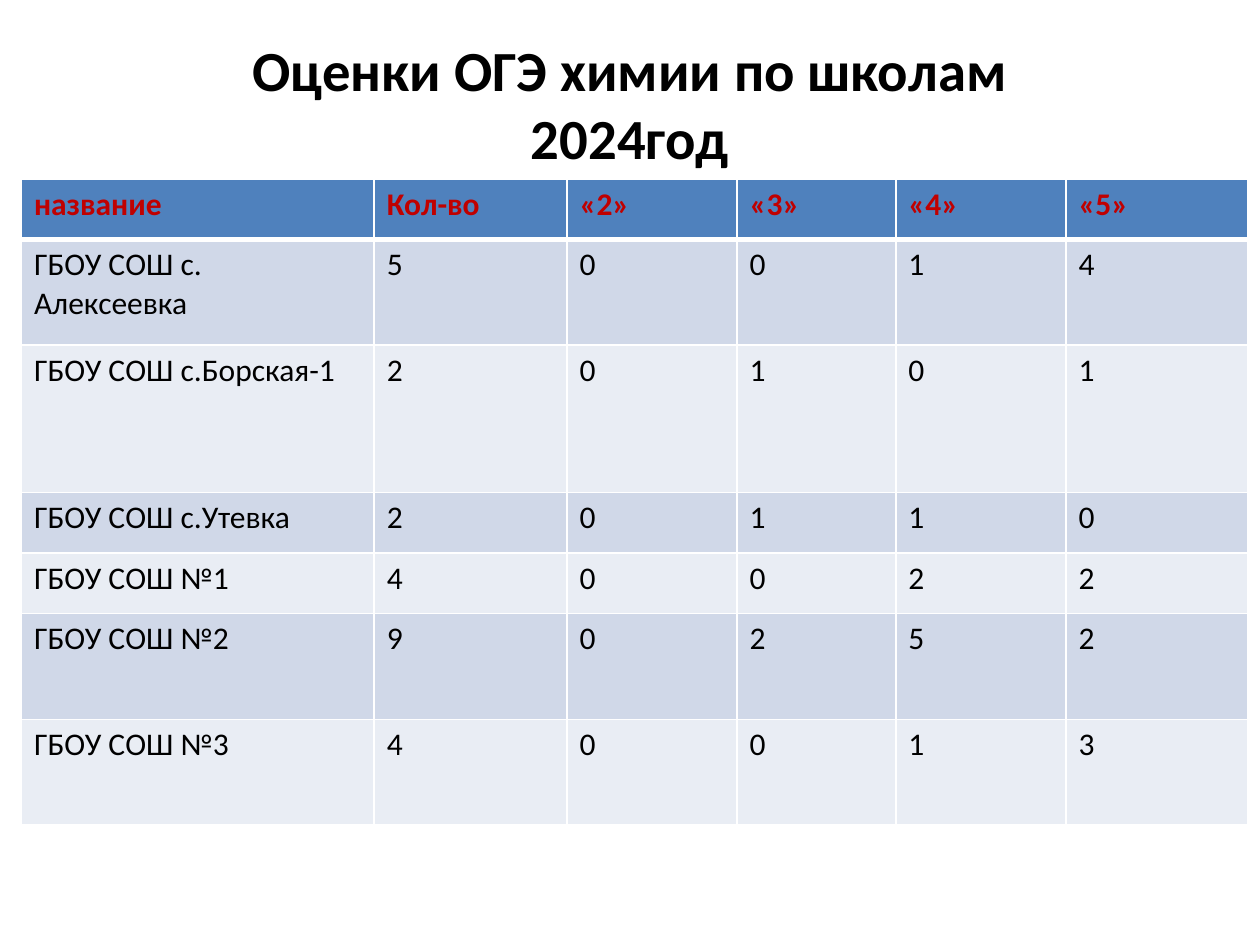
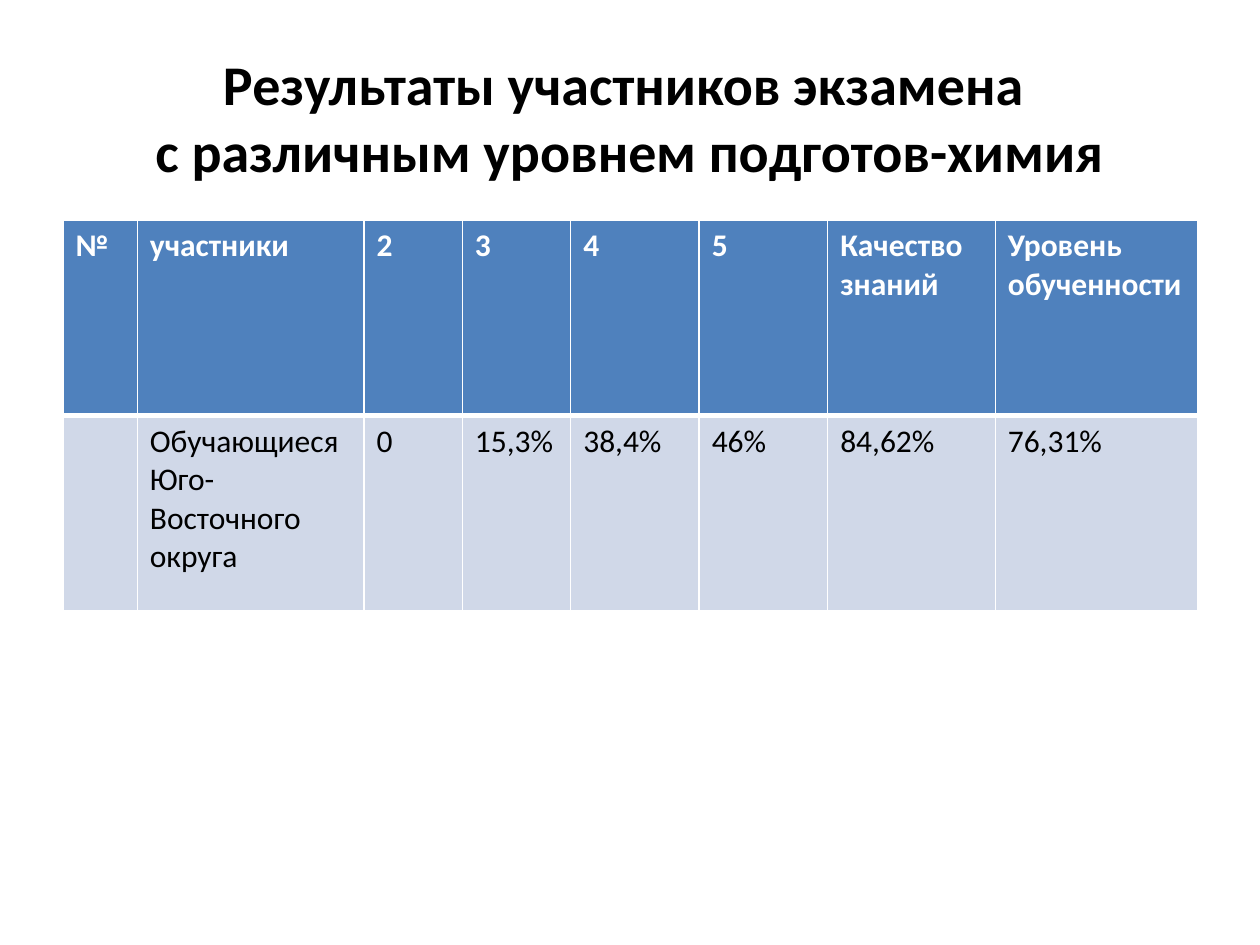
"""Build two slides of chemistry exam results, each a title above a table."""
from dataclasses import dataclass

from lxml import etree
from pptx import Presentation
from pptx import util as u
from pptx.dml.color import RGBColor
from pptx.enum import text
from pptx.oxml import ns


@dataclass(frozen=True)
class Theme:
    font: str = "Calibri"
    title_size: float = 32
    table_size: float = 18
    ink: str = "000000"
    white: str = "FFFFFF"
    red: str = "C00000"
    header_fill: str = "4F81BD"
    band_fills: tuple = ("D0D8E8", "E9EDF4")
    thin_line: float = 1
    thick_line: float = 3


theme = Theme()


def style_paragraph(paragraph, size, color, bold):
    paragraph.font.name = theme.font
    paragraph.font.size = u.Pt(size)
    paragraph.font.bold = bold
    paragraph.font.color.rgb = RGBColor.from_string(color)


def add_border(cell, side, width):
    properties = cell._tc.get_or_add_tcPr()
    line = etree.SubElement(properties, ns.qn(f"a:ln{side}"), w=str(u.Pt(width)))
    fill = etree.SubElement(line, ns.qn("a:solidFill"))
    etree.SubElement(fill, ns.qn("a:srgbClr"), val=theme.white)


slides = [
    {
        "title": "Оценки ОГЭ химии по школам\v2024год",
        "title_size": 32.4,
        "title_height": 1.03,
        "table_at": (0.17, 1.42),
        "header_color": theme.red,
        "widths": [2.8, 1.53, 1.35, 1.26, 1.35, 1.44],
        "heights": [0.48, 0.84, 1.17, 0.48, 0.48, 0.84, 0.84],
        "rows": [
            ["название", "Кол-во", "«2»", "«3»", "«4»", "«5»"],
            ["ГБОУ СОШ с. Алексеевка", 5, 0, 0, 1, 4],
            ["ГБОУ СОШ с.Борская-1", 2, 0, 1, 0, 1],
            ["ГБОУ СОШ с.Утевка", 2, 0, 1, 1, 0],
            ["ГБОУ СОШ №1", 4, 0, 0, 2, 2],
            ["ГБОУ СОШ №2", 9, 0, 2, 5, 2],
            ["ГБОУ СОШ №3", 4, 0, 0, 1, 3],
        ],
    },
    {
        "title": "Результаты участников экзамена \vс различным уровнем подготов-химия",
        "title_size": theme.title_size,
        "title_height": 1.25,
        "table_at": (0.5, 1.75),
        "header_color": theme.white,
        "widths": [0.59, 1.8, 0.78, 0.86, 1.02, 1.02, 1.33, 1.61],
        "heights": [1.55, 1.55],
        "rows": [
            ["№", "участники", "2", "3", "4", "5", "Качество знаний", "Уровень обученности"],
            ["", "Обучающиеся Юго-Восточного округа", 0, "15,3%", "38,4%", "46%", "84,62%", "76,31%"],
        ],
    },
]

presentation = Presentation()
presentation.slide_width = u.Inches(10)
presentation.slide_height = u.Inches(7.5)

for content in slides:
    slide = presentation.slides.add_slide(presentation.slide_layouts[6])

    title = slide.shapes.add_textbox(
        u.Inches(0.5), u.Inches(0.3), u.Inches(9), u.Inches(content["title_height"])
    )
    title.text_frame.word_wrap = True
    title.text_frame.vertical_anchor = text.MSO_ANCHOR.MIDDLE
    paragraph = title.text_frame.paragraphs[0]
    paragraph.text = content["title"]
    paragraph.alignment = text.PP_ALIGN.CENTER
    style_paragraph(paragraph, content["title_size"], theme.ink, True)

    rows, widths, heights = content["rows"], content["widths"], content["heights"]
    left, top = content["table_at"]
    table = slide.shapes.add_table(
        len(rows), len(widths), u.Inches(left), u.Inches(top),
        u.Inches(sum(widths)), u.Inches(sum(heights)),
    ).table
    for column, width in zip(table.columns, widths):
        column.width = u.Inches(width)
    for row, height in zip(table.rows, heights):
        row.height = u.Inches(height)

    for row_index, values in enumerate(rows):
        is_header = row_index == 0
        row_fill = theme.header_fill if is_header else theme.band_fills[(row_index - 1) % 2]
        row_color = content["header_color"] if is_header else theme.ink
        top_line = theme.thick_line if row_index == 1 else theme.thin_line
        bottom_line = theme.thick_line if is_header else theme.thin_line
        for column_index, value in enumerate(values):
            cell = table.cell(row_index, column_index)
            paragraph = cell.text_frame.paragraphs[0]
            paragraph.text = str(value)
            style_paragraph(paragraph, theme.table_size, row_color, is_header)
            for side, width in zip("LRTB", (theme.thin_line, theme.thin_line, top_line, bottom_line)):
                add_border(cell, side, width)
            cell.fill.solid()
            cell.fill.fore_color.rgb = RGBColor.from_string(row_fill)

presentation.save("out.pptx")
